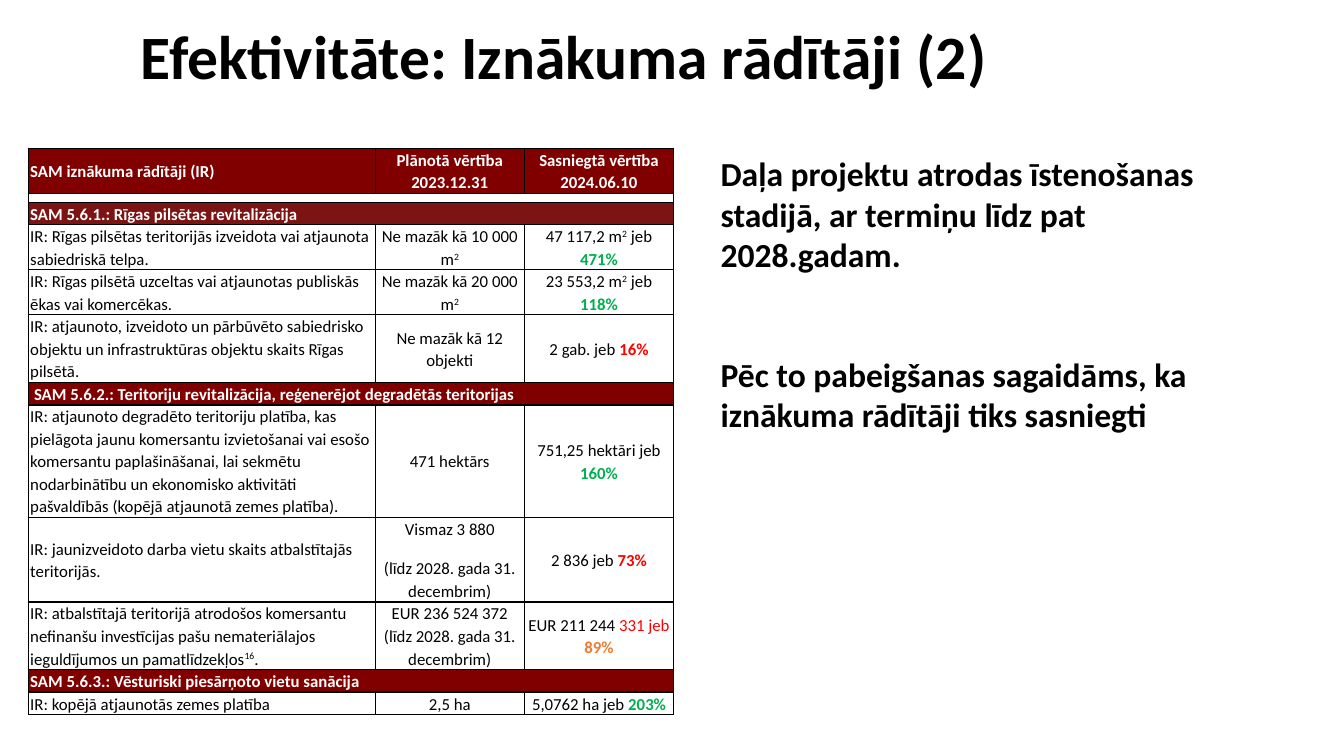
from lxml import etree
from pptx import Presentation
from pptx.dml.color import RGBColor
from pptx.enum.text import MSO_ANCHOR, PP_ALIGN
from pptx.oxml.ns import qn
from pptx.util import Pt

LEFT, CENTER, JUSTIFY = PP_ALIGN.LEFT, PP_ALIGN.CENTER, PP_ALIGN.JUSTIFY
TOP, MIDDLE = MSO_ANCHOR.TOP, MSO_ANCHOR.MIDDLE

BLACK = RGBColor(0x00, 0x00, 0x00)
WHITE = RGBColor(0xFF, 0xFF, 0xFF)
MAROON = RGBColor(0x80, 0x00, 0x00)
BRICK = RGBColor(0x7D, 0x14, 0x14)
GREEN = RGBColor(0x00, 0xB0, 0x50)
RED = RGBColor(0xFF, 0x00, 0x00)
ORANGE = RGBColor(0xED, 0x7D, 0x31)

FONT = "Calibri"
COLS = (247.8, 106.6, 106.6)
LINE = 16.1
GAP = 6.4


def tint(text, color, bold=True):
    return {"text": text, "color": color, "bold": bold}


def sup(text):
    return {"text": text, "raised": True}


HEAD = ("SAM iznākuma rādītāji (IR)", "Plānotā vērtība 2023.12.31",
        "Sasniegtā vērtība 2024.06.10")

# Each group: title, fill, alignment, anchor, and rows of
# (height in points, indicator runs, planned paragraphs, reached runs).
GROUPS = (
    ("SAM 5.6.1.: Rīgas pilsētas revitalizācija", BRICK, LEFT, TOP, (
        (2 * LINE,
         ["IR: Rīgas pilsētas teritorijās izveidota vai atjaunota sabiedriskā telpa."],
         [["Ne mazāk kā 10 000 m", sup("2")]],
         ["47 117,2 m", sup("2"), " jeb ", tint("471%", GREEN)]),
        (2 * LINE,
         ["IR: Rīgas pilsētā uzceltas vai atjaunotas publiskās ēkas vai komercēkas."],
         [["Ne mazāk kā 20 000 m", sup("2")]],
         ["23 553,2 m", sup("2"), " jeb ", tint("118%", GREEN)]),
        (3 * LINE,
         ["IR: atjaunoto, izveidoto un pārbūvēto sabiedrisko objektu un "
          "infrastruktūras objektu skaits Rīgas pilsētā."],
         [["Ne mazāk kā 12 objekti"]],
         ["2 gab. jeb ", tint("16%", RED)]),
    )),
    (" SAM 5.6.2.: Teritoriju revitalizācija, reģenerējot degradētās teritorijas",
     MAROON, JUSTIFY, TOP, (
        (5 * LINE,
         ["IR: atjaunoto degradēto teritoriju platība, kas pielāgota jaunu "
          "komersantu izvietošanai vai esošo komersantu paplašināšanai, lai "
          "sekmētu nodarbinātību un ekonomisko aktivitāti pašvaldībās "
          "(kopējā atjaunotā zemes platība)."],
         [["471 hektārs"]],
         ["751,25 hektāri jeb ", tint("160%", GREEN)]),
        (3 * LINE + 12,
         ["IR: jaunizveidoto darba vietu skaits atbalstītajās teritorijās."],
         [["Vismaz 3 880"], ["(līdz 2028. gada 31. decembrim)"]],
         ["2 836 jeb ", tint("73%", RED)]),
        (3 * LINE,
         ["IR: atbalstītajā teritorijā atrodošos komersantu nefinanšu "
          "investīcijas pašu nemateriālajos ieguldījumos un pamatlīdzekļos",
          sup("16"), "."],
         [["EUR 236 524 372 (līdz 2028. gada 31. decembrim)"]],
         ["EUR 211 244 ", tint("331 jeb ", RED, False), tint("89%", ORANGE)]),
     )),
    ("SAM 5.6.3.: Vēsturiski piesārņoto vietu sanācija", MAROON, LEFT, MIDDLE, (
        (LINE,
         ["IR: kopējā atjaunotās zemes platība"],
         [["2,5 ha"]],
         ["5,0762 ha jeb ", tint("203%", GREEN)]),
    )),
)


def add_run(para, text, size, color=BLACK, bold=False, raised=False):
    run = para.add_run()
    run.text = text
    font = run.font
    font.name, font.size, font.bold = FONT, Pt(size), bold
    font.color.rgb = color
    if raised:
        run._r.get_or_add_rPr().set("baseline", "30000")


def add_text(slide, box, paras, size, anchor=TOP, line=1.0, gap=0):
    shape = slide.shapes.add_textbox(*map(Pt, box))
    frame = shape.text_frame
    frame.word_wrap = True
    frame.vertical_anchor = anchor
    for i, text in enumerate(paras):
        para = frame.add_paragraph() if i else frame.paragraphs[0]
        para.line_spacing = line
        if i:
            para.space_before = Pt(gap)
        add_run(para, text, size, bold=True)


def set_edges(cell):
    props = cell._tc.get_or_add_tcPr()
    for i, side in enumerate(("lnL", "lnR", "lnT", "lnB")):
        edge = etree.Element(qn(f"a:{side}"), w=str(Pt(1)))
        fill = etree.SubElement(edge, qn("a:solidFill"))
        etree.SubElement(fill, qn("a:srgbClr"), val=str(BLACK))
        props.insert(i, edge)


def style_cell(cell):
    """Give an empty cell its borders, margins and a tiny line height."""
    cell.fill.background()
    cell.margin_left = cell.margin_right = Pt(1.4)
    cell.margin_top = cell.margin_bottom = 0
    set_edges(cell)
    etree.SubElement(cell.text_frame.paragraphs[0]._p,
                     qn("a:endParaRPr"), sz="400")


def fill_cell(cell, paras, align=LEFT, anchor=MIDDLE, fill=None):
    """Write paragraphs of runs; a filled cell gets bold white text."""
    cell.vertical_anchor = anchor
    base = {"color": BLACK}
    if fill is not None:
        cell.fill.solid()
        cell.fill.fore_color.rgb = fill
        base = {"color": WHITE, "bold": True}
    frame = cell.text_frame
    for i, runs in enumerate(paras):
        para = frame.add_paragraph() if i else frame.paragraphs[0]
        para.alignment, para.line_spacing = align, 1.1
        para.space_before = para.space_after = Pt(6)
        for run in runs:
            part = {"text": run} if isinstance(run, str) else run
            add_run(para, size=12, **{**base, **part})


def add_grid(slide):
    heights = [2 * LINE, GAP]
    for group in GROUPS:
        heights += [LINE] + [row[0] for row in group[-1]]
    shape = slide.shapes.add_table(len(heights), len(COLS), Pt(20.2), Pt(105.9),
                                   Pt(sum(COLS)), Pt(sum(heights)))
    table = shape.table
    table.first_row = table.horz_banding = False
    for col, width in zip(table.columns, COLS):
        col.width = Pt(width)
    for row, height in zip(table.rows, heights):
        row.height = Pt(height)
    for cell in table.iter_cells():
        style_cell(cell)

    for c, text in enumerate(HEAD):
        fill_cell(table.cell(0, c), [[text]], CENTER if c else LEFT, fill=MAROON)
    table.cell(1, 0).merge(table.cell(1, 2))

    r = 2
    for title, fill, align, anchor, rows in GROUPS:
        table.cell(r, 0).merge(table.cell(r, 2))
        fill_cell(table.cell(r, 0), [[title]], align, anchor, fill)
        for r, (_, name, plan, done) in enumerate(rows, r + 1):
            fill_cell(table.cell(r, 0), [name])
            fill_cell(table.cell(r, 1), plan, CENTER)
            fill_cell(table.cell(r, 2), [done], CENTER)
        r += 1


def main():
    deck = Presentation()
    deck.slide_width, deck.slide_height = Pt(960), Pt(540)
    slide = deck.slides.add_slide(deck.slide_layouts[6])
    add_text(slide, (93.6, 14.4, 828, 56.2),
             ["Efektivitāte: Iznākuma rādītāji (2)"], 44, MIDDLE, 0.9)
    add_grid(slide)
    add_text(slide, (507.6, 105.9, 370, 211),
             ["Daļa projektu atrodas īstenošanas stadijā, ar termiņu līdz pat "
              "2028.gadam.",
              "Pēc to pabeigšanas sagaidāms, ka iznākuma rādītāji tiks sasniegti"],
             24, gap=57)
    deck.save("out.pptx")


if __name__ == "__main__":
    main()
